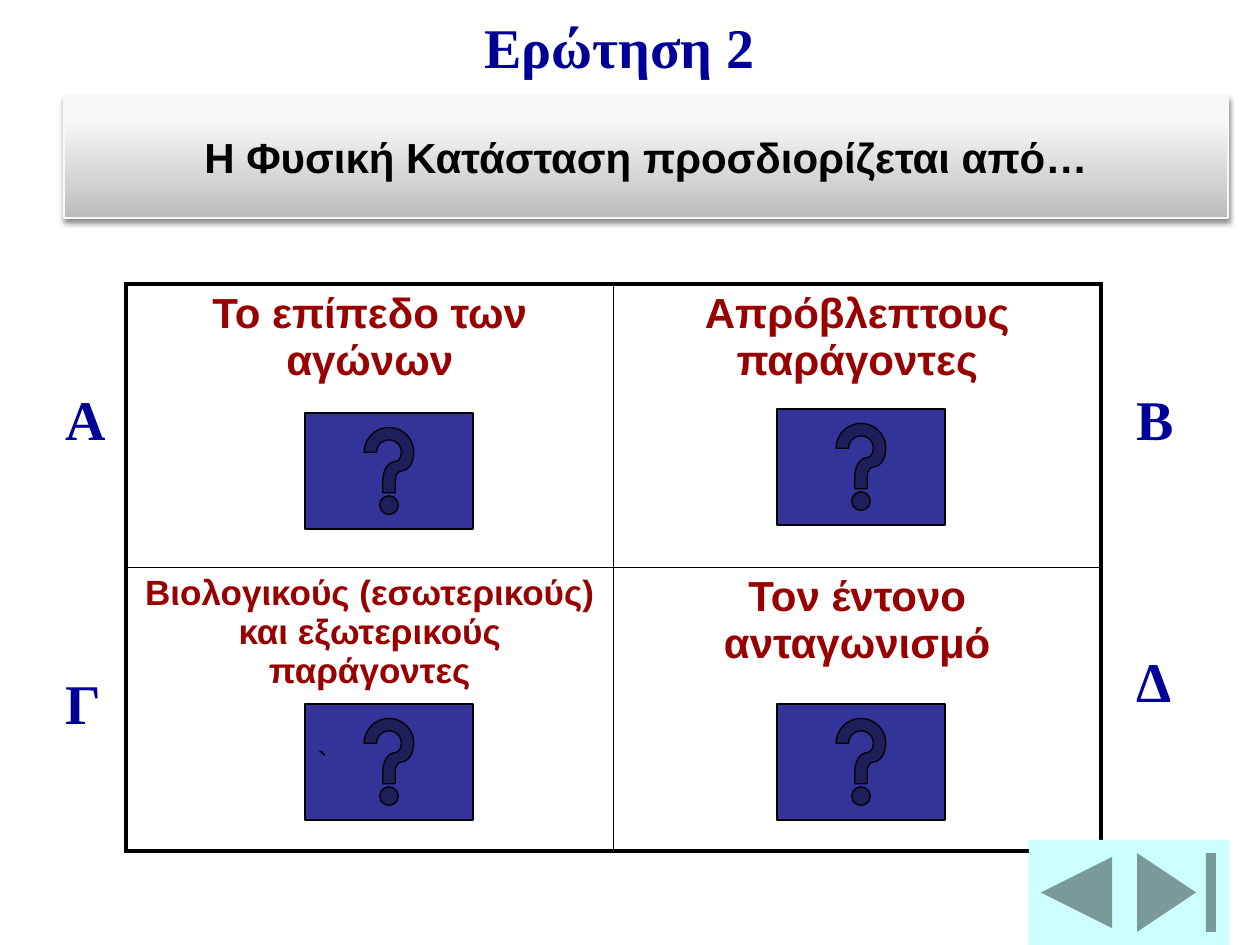
from lxml.etree import SubElement as Sub
from pptx import Presentation
from pptx.dml.color import RGBColor
from pptx.enum.shapes import MSO_SHAPE as Kind
from pptx.enum.text import MSO_ANCHOR as Anchor, PP_ALIGN as Align
from pptx.oxml.ns import qn
from pptx.util import Emu, Pt

BLACK = RGBColor(0, 0, 0)
WHITE = RGBColor(255, 255, 255)
PALE = RGBColor(0xF7, 0xF7, 0xF7)
GREY = RGBColor(0xBD, 0xBD, 0xBD)
NAVY = RGBColor(0, 0, 0x99)
RED = RGBColor(0x99, 0, 0)
BLUE = RGBColor(0x33, 0x33, 0x99)
CYAN = RGBColor(0xCC, 0xFF, 0xFF)

LABELS = [("Α", 53, 378), ("Γ", 53, 662), ("Β", 1124, 378), ("Δ", 1124, 640)]
ANSWERS = [
    [("Το επίπεδο των αγώνων", 24), ("Απρόβλεπτους παράγοντες", 24)],
    [("Βιολογικούς (εσωτερικούς) και εξωτερικούς παράγοντες", 20),
     ("Τον έντονο ανταγωνισμό", 24)],
]
HELPS = [(305, 704, "`"), (777, 704, ""), (777, 409, ""), (305, 413, "")]


def px(num):
    """Turn pixels into EMU."""
    return Emu(round(num * 914400 / 126))


def write(frame, text, size=24, font="Arial", color=BLACK, bold=True,
          align=Align.LEFT):
    """Put one formatted paragraph in a text frame."""
    para = frame.paragraphs[0]
    para.alignment = align
    run = para.add_run()
    run.text = text
    run.font.size = Pt(size)
    run.font.name = font
    run.font.bold = bold
    run.font.color.rgb = color


def add_label(slide, text, left, top, width=63):
    """Add a navy serif label."""
    box = slide.shapes.add_textbox(px(left), px(top), px(width), px(79))
    box.text_frame.word_wrap = True
    write(box.text_frame, text, size=32, font="Times New Roman", color=NAVY)


def add_shape(slide, kind, left, top, width, height, fill=None, line=None):
    """Add a preset shape without shadow."""
    shape = slide.shapes.add_shape(kind, px(left), px(top), px(width), px(height))
    shape.shadow.inherit = False
    if fill is not None:
        shape.fill.solid()
        shape.fill.fore_color.rgb = fill
    if line is None:
        shape.line.fill.background()
    else:
        shape.line.color.rgb = line
        shape.line.width = Pt(0.75)
    return shape


def add_shade(shape):
    """Give a shape a soft shadow below."""
    effects = shape._element.spPr.find(qn("a:effectLst"))
    shade = Sub(effects, qn("a:outerShdw"), blurRad="40000", dist="23000",
                dir="5400000", rotWithShape="0")
    color = Sub(shade, qn("a:srgbClr"), val="000000")
    Sub(color, qn("a:alpha"), val="45000")


def add_banner(slide, text):
    """Add the question on a grey gradient."""
    banner = add_shape(slide, Kind.RECTANGLE, 64, 96, 1164, 122, line=PALE)
    banner.fill.gradient()
    banner.fill.gradient_angle = 270
    stops = banner.fill.gradient_stops
    for stop, color, place in zip(stops, (PALE, GREY), (0.2, 1)):
        stop.color.rgb = color
        stop.position = place
    add_shade(banner)
    banner.text_frame.word_wrap = True
    banner.text_frame.vertical_anchor = Anchor.MIDDLE
    write(banner.text_frame, text, align=Align.CENTER)


def set_edge(cell, side, width):
    """Draw one black cell border."""
    edge = Sub(cell._tc.get_or_add_tcPr(), qn(f"a:{side}"), w=str(Pt(width)))
    Sub(Sub(edge, qn("a:solidFill")), qn("a:srgbClr"), val=str(BLACK))


def add_grid(slide):
    """Add the table of four answers."""
    grid = slide.shapes.add_table(2, 2, px(126), px(284), px(975), px(567)).table
    grid.first_row = grid.horz_banding = False
    for row, line in enumerate(ANSWERS):
        for col, (text, size) in enumerate(line):
            cell = grid.cell(row, col)
            outer = {"lnL": col == 0, "lnR": col == 1,
                     "lnT": row == 0, "lnB": row == 1}
            for side, thick in outer.items():
                set_edge(cell, side, 2.25 if thick else 1)
            cell.fill.solid()
            cell.fill.fore_color.rgb = WHITE
            write(cell.text_frame, text, size=size, color=RED,
                  align=Align.CENTER)


def add_help(slide, left, top, text):
    """Add a help button with optional text."""
    button = add_shape(slide, Kind.ACTION_BUTTON_HELP, left, top, 168, 116,
                       fill=BLUE, line=BLACK)
    if text:
        button.text_frame.word_wrap = False
        button.text_frame.vertical_anchor = Anchor.MIDDLE
        write(button.text_frame, text, size=18, bold=False)


def main():
    """Build and save the slide."""
    deck = Presentation()
    deck.slide_width, deck.slide_height = px(1260), px(945)
    slide = deck.slides.add_slide(deck.slide_layouts[6])
    add_banner(slide, "Η Φυσική Κατάσταση προσδιορίζεται από…")
    add_grid(slide)
    for text, left, top in LABELS:
        add_label(slide, text, left, top)
    add_label(slide, "Ερώτηση 2", 472, 6, width=336)
    for left, top, text in HELPS:
        add_help(slide, left, top, text)
    add_shape(slide, Kind.ACTION_BUTTON_END, 1124, 840, 105, 105, fill=CYAN)
    add_shape(slide, Kind.ACTION_BUTTON_BACK_OR_PREVIOUS, 1029, 840, 95, 105,
              fill=CYAN)
    deck.save("out.pptx")


if __name__ == "__main__":
    main()
